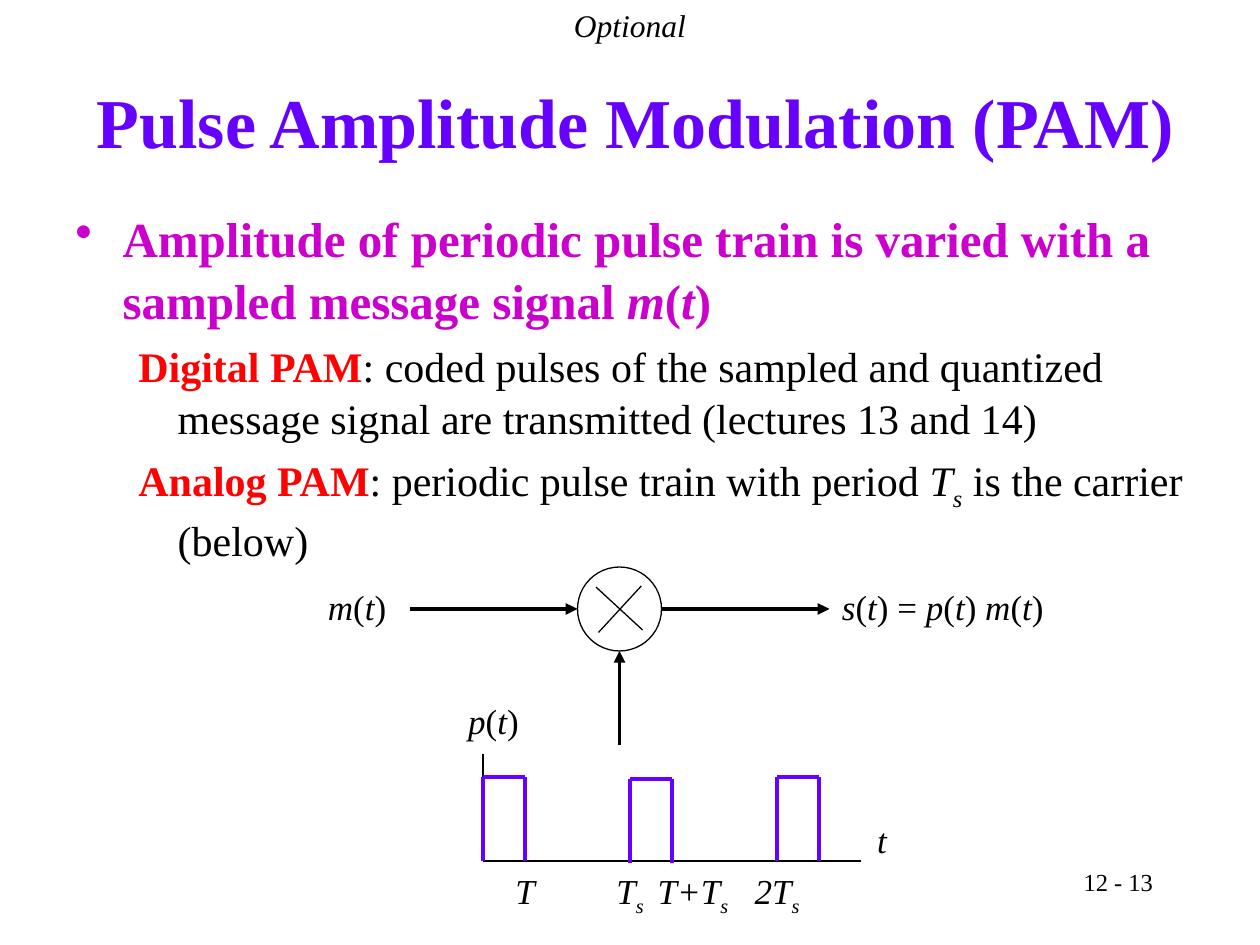
import pptx
import pptx.dml.color
import pptx.enum.shapes
import pptx.enum.text
import pptx.oxml.ns
import pptx.util
from lxml import etree

Pt = pptx.util.Pt
RGB = pptx.dml.color.RGBColor
ALIGN = pptx.enum.text.PP_ALIGN
ANCHOR = pptx.enum.text.MSO_ANCHOR
AUTO_SIZE = pptx.enum.text.MSO_AUTO_SIZE
qn = pptx.oxml.ns.qn

BLACK = RGB(0x00, 0x00, 0x00)
VIOLET = RGB(0x66, 0x00, 0xFF)
MAGENTA = RGB(0xCC, 0x00, 0xCC)
RED = RGB(0xFF, 0x01, 0x01)

FONT = "Times New Roman"
THIN, THICK = 0.75, 2.25

ITALIC = {"italic": True}
SUBSCRIPT = {"italic": True, "subscript": True}
TERM = {"bold": True, "color": RED}


def function_of_t(name):
    return [(name, ITALIC), ("(", {}), ("t", ITALIC), (")", {})]


def add_run(paragraph, text, style):
    run = paragraph.add_run()
    run.text = text
    style = dict(style)
    run.font.color.rgb = style.pop("color")
    if style.pop("subscript", False):
        run.font._element.set("baseline", "-25000")
    for attribute, value in style.items():
        setattr(run.font, attribute, value)


def fill_paragraph(paragraph, runs, size, align=ALIGN.LEFT, space=0, line_spacing=None,
                   left=0, hanging=0, bullet=None, **base):
    """Write styled runs; space is the space before, in percent."""
    paragraph.alignment = align
    if line_spacing:
        paragraph.line_spacing = line_spacing
    properties = paragraph._p.get_or_add_pPr()
    properties.set("marL", str(Pt(left)))
    properties.set("indent", str(-Pt(hanging)))
    if space:
        before = etree.SubElement(properties, qn("a:spcBef"))
        etree.SubElement(before, qn("a:spcPct")).set("val", str(space * 1000))
    if bullet:
        etree.SubElement(properties, qn("a:buChar")).set("char", bullet)
    base = {"name": FONT, "size": Pt(size), "color": BLACK, **base}
    for text, style in runs:
        add_run(paragraph, text, {**base, **style})


def add_text_frame(slide, left, top, width, height, **frame_format):
    box = slide.shapes.add_textbox(Pt(left), Pt(top), Pt(width), Pt(height))
    for attribute, value in {"word_wrap": True, **frame_format}.items():
        setattr(box.text_frame, attribute, value)
    return box.text_frame


def add_label(slide, left, top, width, runs, size=20, height=31, align=ALIGN.CENTER):
    frame = add_text_frame(slide, left, top, width, height,
                           auto_size=AUTO_SIZE.SHAPE_TO_FIT_TEXT)
    fill_paragraph(frame.paragraphs[0], runs, size, align, space=50)


def add_line(slide, start, end, color=BLACK, weight=THIN, arrow=False):
    line = slide.shapes.add_connector(
        pptx.enum.shapes.MSO_CONNECTOR.STRAIGHT, *map(Pt, (*start, *end)))
    line.line.color.rgb = color
    line.line.width = Pt(weight)
    if arrow:
        outline = line.line._get_or_add_ln()
        etree.SubElement(outline, qn("a:tailEnd")).set("type", "triangle")
    etree.SubElement(line._element.spPr, qn("a:effectLst"))


def add_pulse(slide, left, base):
    right, top = left + 24, base - 48
    for start, end in (((left, base), (left, top)),
                       ((right, base), (right, top)),
                       ((left, top), (right, top))):
        add_line(slide, start, end, VIOLET, THICK)


def add_body(slide):
    frame = add_text_frame(slide, 36, 114, 654, 366)
    shared = {"space": 20, "line_spacing": 1.05}
    fill_paragraph(
        frame.paragraphs[0],
        [("Amplitude of periodic pulse train is varied with a sampled message signal ", {}),
         *function_of_t("m")],
        28, left=27, hanging=27, bullet="•", bold=True, color=MAGENTA, **shared)
    details = (
        [("Digital PAM", TERM),
         (": coded pulses of the sampled and quantized message signal are "
          "transmitted (lectures 13 and 14)", {})],
        [("Analog PAM", TERM),
         (": periodic pulse train with period ", {}),
         ("T", ITALIC), ("s", SUBSCRIPT), (" is the carrier (below)", {})],
    )
    for runs in details:
        fill_paragraph(frame.add_paragraph(), runs, 24, left=58.5, hanging=22.5, **shared)


def add_modulator(slide):
    # Multiplier
    center_x, center_y, radius = 354, 348, 24
    multiplier = slide.shapes.add_shape(
        pptx.enum.shapes.MSO_SHAPE.OVAL, Pt(center_x - radius), Pt(center_y - radius),
        Pt(2 * radius), Pt(2 * radius))
    multiplier.shadow.inherit = False
    multiplier.fill.background()
    multiplier.line.color.rgb = BLACK
    multiplier.line.width = Pt(THIN)
    add_line(slide, (342, 361.4), (366.5, 334.8))
    add_line(slide, (367.2, 360), (340.6, 335.5))

    # Message in, product out, carrier from below
    for start, end in (((234, center_y), (center_x - radius, center_y)),
                       ((center_x + radius, center_y), (474, center_y)),
                       ((center_x, 426), (center_x, center_y + radius))):
        add_line(slide, start, end, weight=THICK, arrow=True)
    add_label(slide, 174, 331, 60, function_of_t("m"))
    add_label(slide, 474, 331, 180,
              [*function_of_t("s"), (" = ", {}), *function_of_t("p"), (" ", {}),
               *function_of_t("m")], align=ALIGN.LEFT)


def add_pulse_train(slide):
    # Axes
    origin_x, base = 276, 492
    add_line(slide, (origin_x, 430.6), (origin_x, base))
    add_line(slide, (origin_x, base), (492, base))
    add_label(slide, 252, 396, 60, function_of_t("p"))
    add_label(slide, 486, 464.4, 36, [("t", ITALIC)])

    # Pulses, one per period; the middle one sits slightly lower
    for index, drop in enumerate((0, 1.2, 0)):
        add_pulse(slide, origin_x + 84 * index, base + drop)

    # Time marks
    for left, width, symbol, subscript in ((270, 60, "T", ""), (342, 36, "T", "s"),
                                           (366, 60, "T+T", "s"), (420, 48, "2T", "s")):
        runs = [(symbol, ITALIC)]
        if subscript:
            runs.append((subscript, SUBSCRIPT))
        add_label(slide, left, 493.2, width, runs)


def main():
    deck = pptx.Presentation()
    deck.slide_width, deck.slide_height = Pt(720), Pt(540)
    slide = deck.slides.add_slide(deck.slide_layouts[6])

    # Page number, title and banner
    number = add_text_frame(slide, 516, 492, 150, 36)
    fill_paragraph(number.paragraphs[0], [("12 - 13", {})], 14, ALIGN.RIGHT)
    title = add_text_frame(slide, 36, 24, 654, 90, vertical_anchor=ANCHOR.MIDDLE)
    fill_paragraph(title.paragraphs[0], [("Pulse Amplitude Modulation (PAM)", {})],
                   40, ALIGN.CENTER, bold=True, color=VIOLET)
    add_label(slide, 0, 0, 720, [("Optional", ITALIC)], size=18, height=29)

    # Explanation and diagram
    add_body(slide)
    add_modulator(slide)
    add_pulse_train(slide)
    deck.save("out.pptx")


if __name__ == "__main__":
    main()
